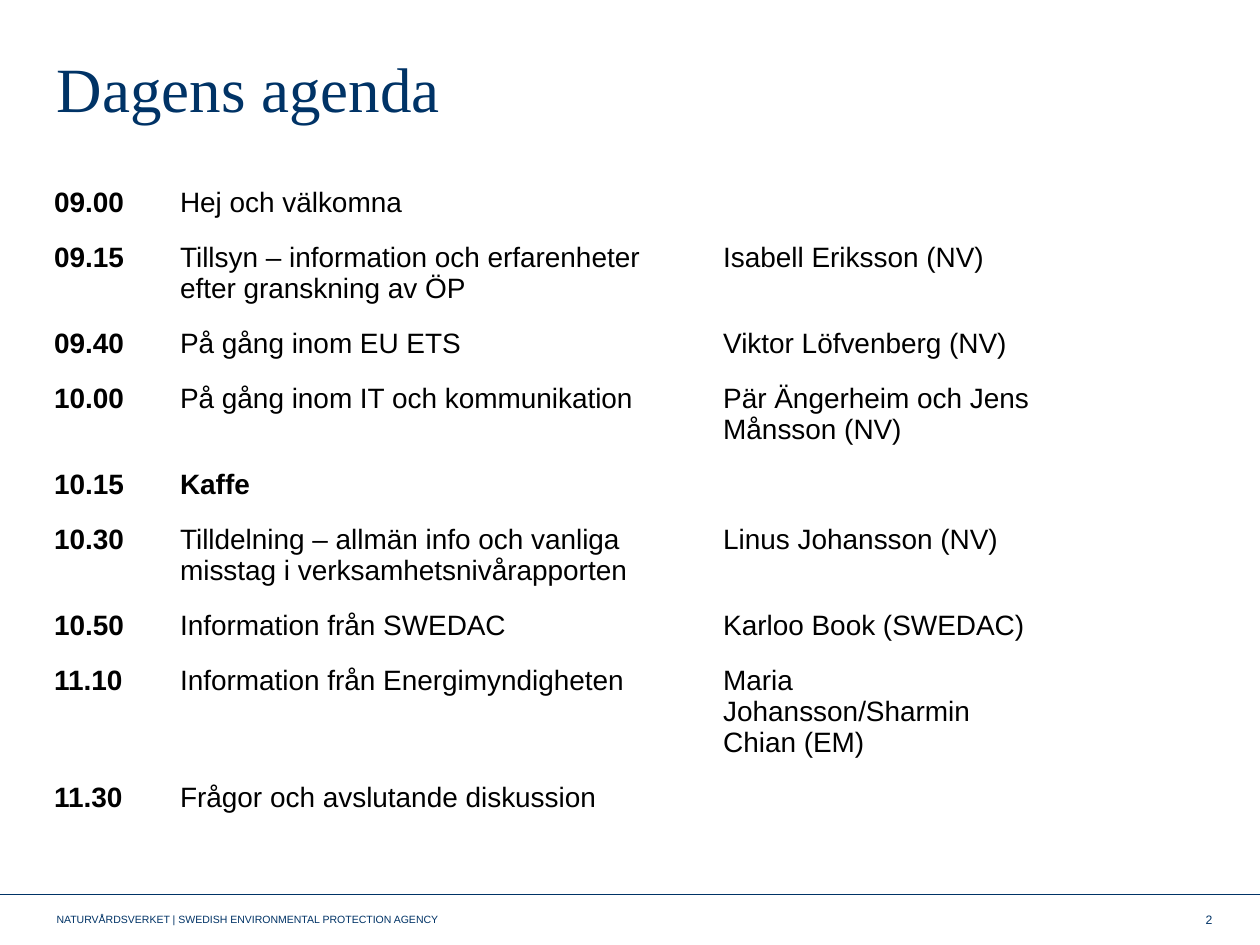
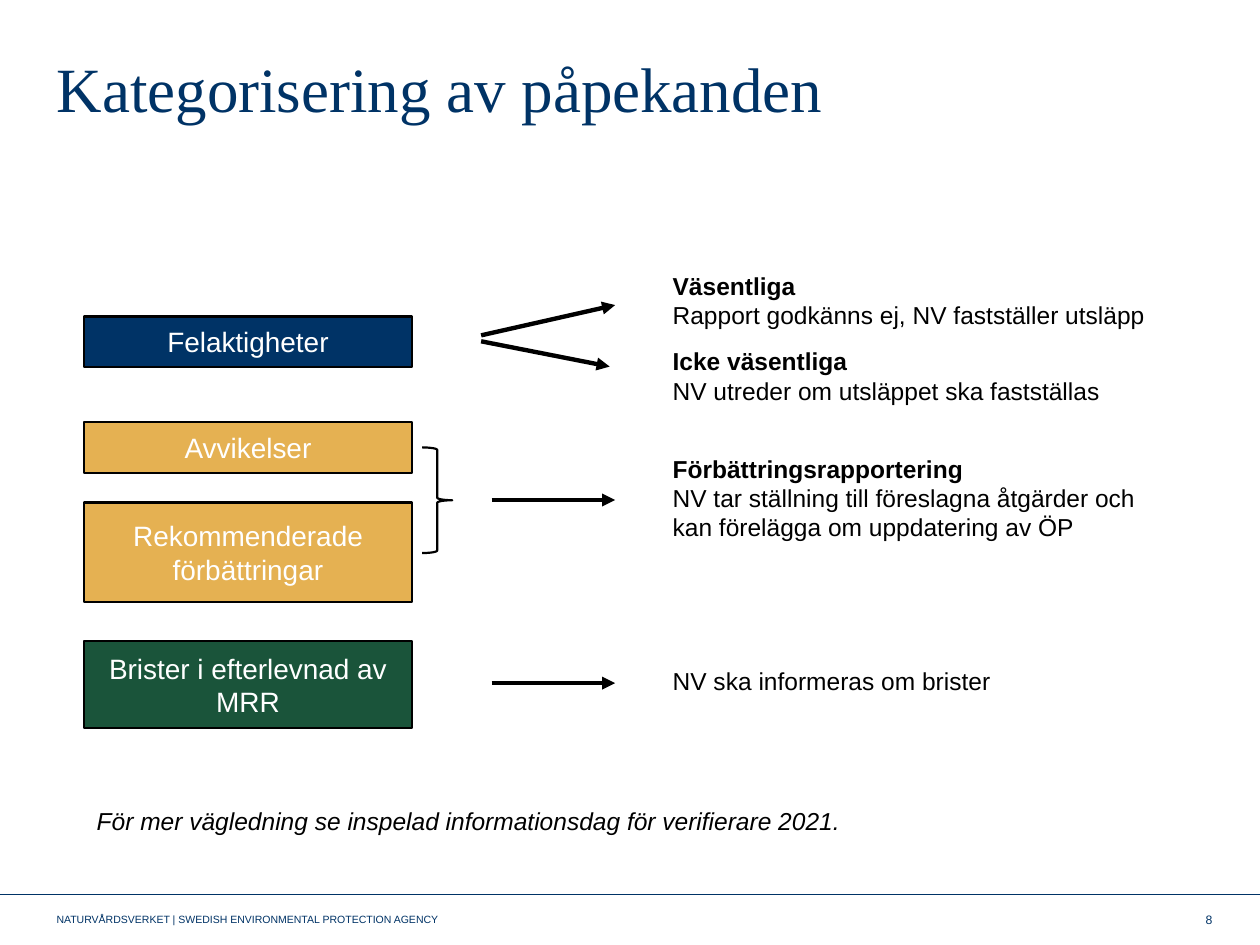
import pptx
import pptx.util
import pptx.dml.color
import pptx.enum.shapes
import pptx.enum.text
import pptx.oxml.ns
from lxml import etree

Cm, Pt = pptx.util.Cm, pptx.util.Pt
Shape = pptx.enum.shapes.MSO_SHAPE
Align = pptx.enum.text.PP_ALIGN
Anchor = pptx.enum.text.MSO_ANCHOR
Fit = pptx.enum.text.MSO_AUTO_SIZE
qn = pptx.oxml.ns.qn

NAVY, GOLD, GREEN = "003366", "E5B152", "1A543A"
BLACK, WHITE = "000000", "FFFFFF"
SANS, SERIF = "Arial", "Times New Roman"
AGENCY = "NATURVÅRDSVERKET | SWEDISH ENVIRONMENTAL PROTECTION AGENCY"


def rgb(code):
    return pptx.dml.color.RGBColor.from_string(code)


class Deck:
    def __init__(self):
        self.show = pptx.Presentation()
        self.show.slide_width, self.show.slide_height = Cm(25.4), Cm(19.05)
        self.slide = None

    # Text
    def run(self, para, text, size, color=BLACK, font=SANS, bold=False, slant=False):
        run = para.add_run()
        run.text = text
        run.font.name, run.font.size = font, Pt(size)
        run.font.bold, run.font.italic = bold, slant
        run.font.color.rgb = rgb(color)

    def text(self, place, lines, size, color=BLACK, align=None, after=None,
             anchor=Anchor.TOP, fit=Fit.SHAPE_TO_FIT_TEXT, slant=False):
        """Each line is a pair of text and bold."""
        frame = self.slide.shapes.add_textbox(*map(Cm, place)).text_frame
        frame.word_wrap, frame.auto_size = True, fit
        frame.vertical_anchor = anchor
        for i, (line, bold) in enumerate(lines):
            para = frame.add_paragraph() if i else frame.paragraphs[0]
            para.alignment, para.space_after = align, after
            self.run(para, line, size, color, bold=bold, slant=slant)

    # Shapes and lines
    def shape(self, kind, place, fill=None):
        item = self.slide.shapes.add_shape(kind, *map(Cm, place))
        item.shadow.inherit = False
        if fill:
            item.fill.solid()
            item.fill.fore_color.rgb = rgb(fill)
        else:
            item.fill.background()
        item.line.color.rgb, item.line.width = rgb(BLACK), Pt(1.25)
        return item

    def box(self, top, high, text, fill):
        frame = self.shape(Shape.RECTANGLE, (1.7, top, 6.6, high), fill).text_frame
        frame.word_wrap, frame.vertical_anchor = True, Anchor.MIDDLE
        para = frame.paragraphs[0]
        para.alignment = Align.CENTER
        self.run(para, text, 16, WHITE)

    def line(self, ends, color, width, arrow=False):
        kind = pptx.enum.shapes.MSO_CONNECTOR.STRAIGHT
        item = self.slide.shapes.add_connector(kind, *map(Cm, ends))
        item.line.color.rgb, item.line.width = rgb(color), Pt(width)
        props = item._element.spPr
        if arrow:
            etree.SubElement(props.find(qn("a:ln")), qn("a:tailEnd"), type="triangle")
        etree.SubElement(props, qn("a:effectLst"))

    # Slide with title and footer
    def page(self, title, number, width):
        self.slide = self.show.slides.add_slide(self.show.slide_layouts[5])
        self.line((0, 18.03, 25.4, 18.03), NAVY, 0.4)
        foot = dict(color=NAVY, after=Pt(6), anchor=Anchor.MIDDLE, fit=Fit.NONE)
        self.text((0.89, 18.03, 8.59, 1.02), [(AGENCY, False)], 6, **foot)
        self.text((18.97, 18.03, 5.72, 1.02), [(number, False)], 7,
                  align=Align.RIGHT, **foot)
        head = self.slide.shapes.title
        head.left, head.top, head.width, head.height = map(Cm, (0.89, 0.99, width, 4.27))
        frame = head.text_frame
        frame.word_wrap, frame.auto_size = True, Fit.NONE
        frame.vertical_anchor = Anchor.TOP
        para = frame.paragraphs[0]
        para.alignment, para.line_spacing = Align.LEFT, Pt(39.6)
        self.run(para, title, 36, NAVY, SERIF)

    # Agenda table
    def table(self, left, top, wides, highs, rows):
        table = self.slide.shapes.add_table(
            len(rows), len(wides), Cm(left), Cm(top),
            Cm(sum(wides)), Cm(sum(highs))).table
        table.first_row = table.horz_banding = False
        for col, wide in zip(table.columns, wides):
            col.width = Cm(wide)
        for i, (row, high, words) in enumerate(zip(table.rows, highs, rows)):
            row.height = Cm(high)
            for j, (cell, word) in enumerate(zip(row.cells, words)):
                cell.fill.background()
                if not word:
                    continue
                cell.margin_left = cell.margin_right = Cm(0.2)
                cell.margin_top, cell.margin_bottom = Cm(0.05), Cm(0.43)
                cell.vertical_anchor = Anchor.TOP if i else Anchor.BOTTOM
                para = cell.text_frame.paragraphs[0]
                para.space_after = Pt(6)
                self.run(para, word, 16, bold=j == 0 or word == "Kaffe")


def agenda(deck):
    deck.page("Dagens agenda", "2", 13)
    rows = [
        ("09.00", "Hej och välkomna", ""),
        ("09.15", "Tillsyn – information och erfarenheter efter granskning av ÖP",
         "Isabell Eriksson (NV)"),
        ("09.40", "På gång inom EU ETS", "Viktor Löfvenberg (NV)"),
        ("10.00", "På gång inom IT och kommunikation",
         "Pär Ängerheim och Jens Månsson (NV)"),
        ("10.15", "Kaffe", ""),
        ("10.30", "Tilldelning – allmän info och vanliga misstag i "
         "verksamhetsnivårapporten", "Linus Johansson (NV)"),
        ("10.50", "Information från SWEDAC", "Karloo Book (SWEDAC)"),
        ("11.10", "Information från Energimyndigheten",
         "Maria Johansson/Sharmin Chian (EM)"),
        ("11.30", "Frågor och avslutande diskussion", ""),
    ]
    highs = [1.7 if i in (3, 5, 7) else 1.04 for i in range(len(rows))]
    deck.table(0.89, 3.73, (2.54, 10.95, 6.71), highs, rows)


def sorting(deck):
    deck.page("Kategorisering av påpekanden", "8", 23.8)

    # Kinds of remark
    for top, high, text, fill in (
            (6.38, 1.02, "Felaktigheter", NAVY),
            (8.51, 1.02, "Avvikelser", GOLD),
            (10.13, 2.01, "Rekommenderade förbättringar", GOLD),
            (12.93, 1.75, "Brister i efterlevnad av MRR", GREEN)):
        deck.box(top, high, text, fill)
    deck.shape(Shape.RIGHT_BRACE, (8.51, 9.02, 0.61, 2.13))

    # Arrows to the outcomes
    for ends in ((9.7, 6.76, 12.4, 6.15), (9.7, 6.88, 12.29, 7.39),
                 (9.91, 10.08, 12.4, 10.08), (9.91, 13.77, 12.4, 13.77)):
        deck.line(ends, BLACK, 2.5, arrow=True)

    # Outcomes
    for top, high, head, body in (
            (5.33, 1.45, "Väsentliga", "Rapport godkänns ej, NV fastställer utsläpp"),
            (6.86, 1.45, "Icke väsentliga", "NV utreder om utsläppet ska fastställas"),
            (9.02, 2.06, "Förbättringsrapportering",
             "NV tar ställning till föreslagna åtgärder och "
             "kan förelägga om uppdatering av ÖP")):
        deck.text((13.31, top, 10.41, high), [(head, True), (body, False)], 14)
    deck.text((13.31, 13.31, 10.41, 0.86), [("NV ska informeras om brister", False)], 14)

    # Closing note
    note = "För mer vägledning se inspelad informationsdag för verifierare 2021."
    deck.text((1.7, 16.13, 23.01, 0.86), [(note, False)], 14, slant=True)


def main():
    deck = Deck()
    agenda(deck)
    sorting(deck)
    deck.show.save("out.pptx")


if __name__ == "__main__":
    main()
